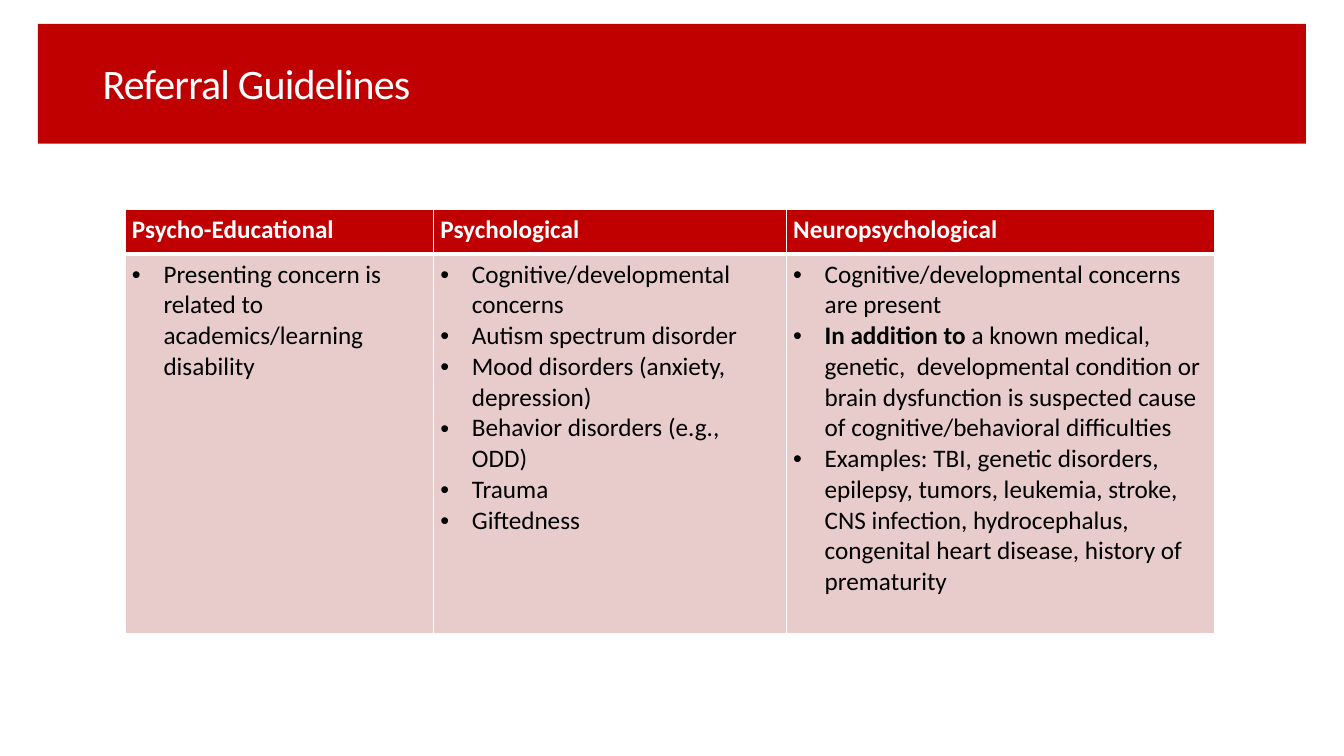
from dataclasses import dataclass

from lxml import etree
from pptx import Presentation
from pptx.dml.color import RGBColor
from pptx.enum.shapes import MSO_SHAPE
from pptx.enum.text import MSO_ANCHOR
from pptx.oxml.ns import qn
from pptx.util import Pt

RECTANGLE = MSO_SHAPE.RECTANGLE
MIDDLE = MSO_ANCHOR.MIDDLE


@dataclass(frozen=True)
class Theme:
    """Colours, font and type sizes of the slide."""
    red: str = "C00000"
    pink: str = "E8CCCC"
    white: str = "FFFFFF"
    black: str = "000000"
    font: str = "Calibri"
    title_size: int = 30
    table_size: int = 18


THEME = Theme()
COLUMN_WIDTHS = (220.3, 252, 306)
ROW_HEIGHTS = (31.7, 271.4)
GUIDELINES = (
    ("Psycho-Educational", (
        (("Presenting concern is related to academics/learning disability", False),),
    )),
    ("Psychological", (
        (("Cognitive/developmental concerns", False),),
        (("Autism spectrum disorder", False),),
        (("Mood disorders (anxiety, depression)", False),),
        (("Behavior disorders (e.g., ODD)", False),),
        (("Trauma", False),),
        (("Giftedness", False),),
    )),
    ("Neuropsychological", (
        (("Cognitive/developmental concerns are present", False),),
        (("In addition to", True),
         (" a known medical, genetic,  developmental condition or brain dysfunction "
          "is suspected cause of cognitive/behavioral difficulties", False)),
        (("Examples: TBI, genetic disorders, epilepsy, tumors, leukemia, stroke, "
          "CNS infection, hydrocephalus, congenital heart disease, history of "
          "prematurity", False),),
    )),
)


def add_span(para, text, size, color, bold=False):
    """Add one formatted run to a paragraph and return it."""
    span = para.add_run()
    span.text = text
    span.font.name = THEME.font
    span.font.size = Pt(size)
    span.font.bold = bold
    span.font.color.rgb = RGBColor.from_string(color)
    return span


def add_banner(page):
    """Draw the red band behind the title."""
    banner = page.shapes.add_shape(RECTANGLE, Pt(27), Pt(17), Pt(905.8), Pt(85.7))
    banner.shadow.inherit = False
    banner.fill.solid()
    banner.fill.fore_color.rgb = RGBColor.from_string(THEME.red)
    banner.line.fill.background()


def add_title(page, text):
    """Place the slide title over the band."""
    box = page.shapes.add_textbox(Pt(66.2), Pt(9.4), Pt(828), Pt(104.4))
    frame = box.text_frame
    frame.word_wrap = True
    frame.vertical_anchor = MIDDLE
    para = frame.paragraphs[0]
    para.line_spacing = 0.9
    span = add_span(para, text, THEME.title_size, THEME.white)
    span.font._element.set("spc", "-60")


def add_bullet(para):
    """Give a paragraph a hanging round bullet."""
    properties = para._p.get_or_add_pPr()
    properties.set("marL", str(Pt(22.5)))
    properties.set("indent", str(-Pt(22.5)))
    etree.SubElement(properties, qn("a:buFont")).set("typeface", "Arial")
    etree.SubElement(properties, qn("a:buChar")).set("char", "•")


def style_cell(cell, color, top, bottom):
    """Set the margins, white borders and fill of a cell."""
    cell.margin_left = cell.margin_right = Pt(5)
    cell.margin_top = cell.margin_bottom = Pt(3.6)
    properties = cell._tc.get_or_add_tcPr()
    for side, width in (("L", 1), ("R", 1), ("T", top), ("B", bottom)):
        border = etree.SubElement(properties, qn(f"a:ln{side}"), w=str(Pt(width)))
        fill = etree.SubElement(border, qn("a:solidFill"))
        etree.SubElement(fill, qn("a:srgbClr")).set("val", THEME.white)
    cell.fill.solid()
    cell.fill.fore_color.rgb = RGBColor.from_string(color)


def fill_bullets(cell, items):
    """Write a bulleted list into a cell."""
    frame = cell.text_frame
    for index, item in enumerate(items):
        para = frame.add_paragraph() if index else frame.paragraphs[0]
        add_bullet(para)
        for text, bold in item:
            add_span(para, text, THEME.table_size, THEME.black, bold)


def add_guideline_table(page):
    """Build the table with one column for each kind of referral."""
    frame = page.shapes.add_table(
        len(ROW_HEIGHTS), len(COLUMN_WIDTHS), Pt(89.3), Pt(149.8),
        Pt(sum(COLUMN_WIDTHS)), Pt(sum(ROW_HEIGHTS)))
    table = frame.table
    for row, height in zip(table.rows, ROW_HEIGHTS):
        row.height = Pt(height)
    for index, (heading, items) in enumerate(GUIDELINES):
        table.columns[index].width = Pt(COLUMN_WIDTHS[index])
        header, body = table.cell(0, index), table.cell(1, index)
        style_cell(header, THEME.red, top=1, bottom=3)
        style_cell(body, THEME.pink, top=3, bottom=1)
        add_span(header.text_frame.paragraphs[0], heading,
                 THEME.table_size, THEME.white, bold=True)
        fill_bullets(body, items)


def main():
    """Build and save the slide."""
    deck = Presentation()
    deck.slide_width, deck.slide_height = Pt(960), Pt(540)
    page = deck.slides.add_slide(deck.slide_layouts[6])
    add_banner(page)
    add_title(page, "Referral Guidelines")
    add_guideline_table(page)
    deck.save("out.pptx")


if __name__ == "__main__":
    main()
